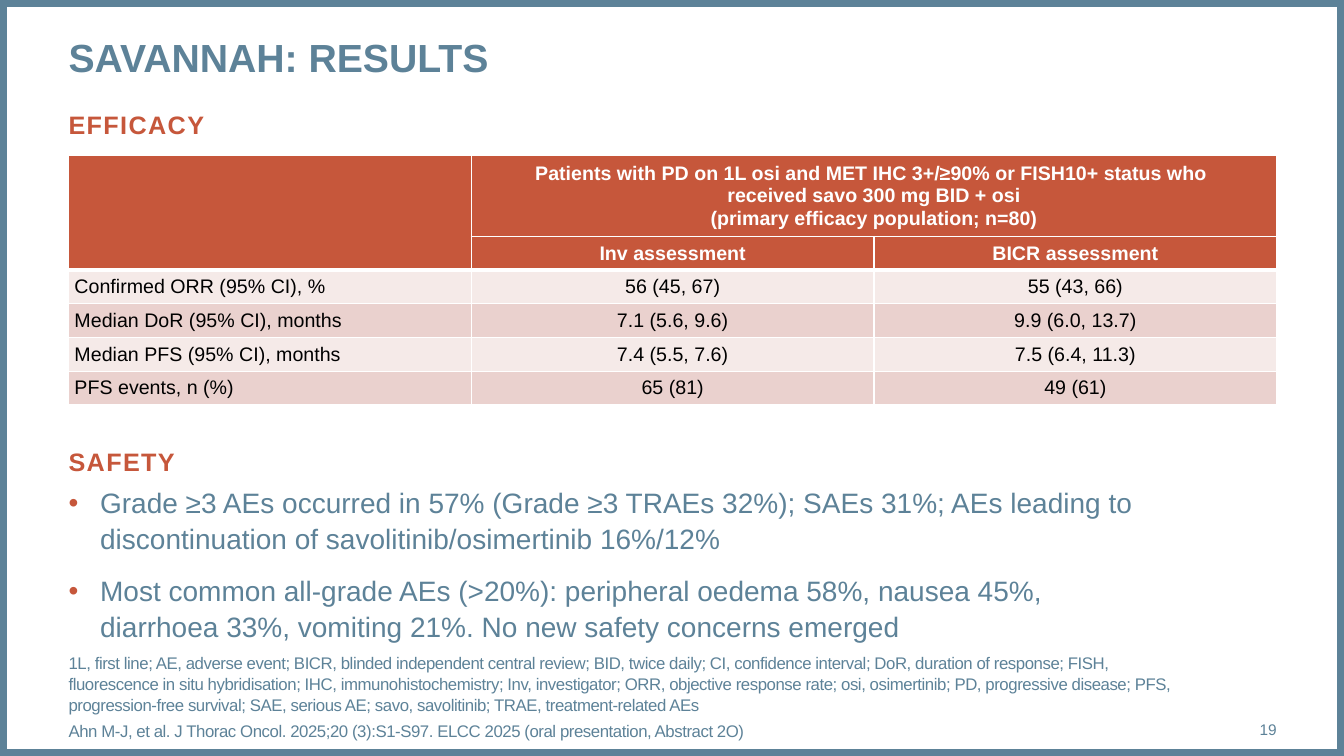
from lxml import etree
from pptx import Presentation
from pptx import util as u
from pptx.dml.color import RGBColor
from pptx.enum import shapes, text
from pptx.oxml import ns

COLORS = {"slate": "5D8298", "rust": "C6573B", "white": "FFFFFF",
          "black": "000000", "pale": "F5EAE8", "rose": "EAD1CE"}
LEFT, WIDTH = 49, 863


def add_xml(parent, tag, **attributes):
    return etree.SubElement(parent, ns.qn(tag), attributes)


class ResultsSlide:
    font = "Arial"

    def __init__(self, presentation):
        self.slide = presentation.slides.add_slide(presentation.slide_layouts[6])

    def color(self, name):
        return RGBColor.from_string(COLORS[name])

    def add_runs(self, paragraph, content, size, color, bold=False, tracking=0):
        for index, line in enumerate(content.split("\n")):
            if index:
                paragraph.add_line_break()
            run = paragraph.add_run()
            run.text = line
            run.font.name = self.font
            run.font.size = u.Pt(size)
            run.font.bold = bold
            run.font.color.rgb = self.color(color)
            if tracking:
                run.font._element.set("spc", str(round(tracking * 100)))

    def bullet(self, paragraph, indent):
        properties = paragraph._p.get_or_add_pPr()
        properties.set("marL", str(u.Pt(indent)))
        properties.set("indent", str(-u.Pt(indent)))
        bullet_color = add_xml(properties, "a:buClr")
        add_xml(bullet_color, "a:srgbClr", val=COLORS["rust"])
        add_xml(properties, "a:buFont", typeface=self.font)
        add_xml(properties, "a:buChar", char="•")

    def frame(self, width, height, line):
        shape = self.slide.shapes.add_shape(
            shapes.MSO_SHAPE.RECTANGLE, 0, 0, u.Pt(width), u.Pt(height))
        shape.shadow.inherit = False
        shape.fill.background()
        shape.line.color.rgb = self.color("slate")
        shape.line.width = u.Pt(line)

    def text(self, box, paragraphs, size, color="slate", bold=False, tracking=0,
             anchor=text.MSO_ANCHOR.TOP, align=text.PP_ALIGN.LEFT,
             spacing=1.06, before=0, indent=0):
        shape = self.slide.shapes.add_textbox(*map(u.Pt, box))
        frame = shape.text_frame
        frame.word_wrap = True
        frame.vertical_anchor = anchor
        frame.margin_left = frame.margin_right = 0
        frame.margin_top = frame.margin_bottom = 0
        for index, content in enumerate(paragraphs):
            paragraph = frame.add_paragraph() if index else frame.paragraphs[0]
            paragraph.alignment = align
            paragraph.line_spacing = spacing
            paragraph.space_before = u.Pt(before if index else 0)
            if indent:
                self.bullet(paragraph, indent)
            self.add_runs(paragraph, content, size, color, bold, tracking)

    def heading(self, top, content):
        self.text((LEFT, top, 200, 25), [content], 18, "rust", True, tracking=1)

    def borders(self, cell, top, bottom):
        properties = cell._tc.get_or_add_tcPr()
        for side, width in (("L", 1), ("R", 1), ("T", top), ("B", bottom)):
            line = add_xml(properties, f"a:ln{side}", w=str(u.Pt(width)))
            if width:
                fill = add_xml(line, "a:solidFill")
                add_xml(fill, "a:srgbClr", val=COLORS["white"])
            else:
                add_xml(line, "a:noFill")

    def table(self, top, rows, heights, header_rows, size):
        columns = len(rows[0])
        table = self.slide.shapes.add_table(
            len(rows), columns, u.Pt(LEFT), u.Pt(top), u.Pt(WIDTH), u.Pt(sum(heights))).table
        table.first_row = table.horz_banding = False
        for row_index, (values, height) in enumerate(zip(rows, heights)):
            table.rows[row_index].height = u.Pt(height)
            header = row_index < header_rows
            band = ("pale", "rose")[(row_index - header_rows) % 2]
            for column, value in enumerate(values):
                cell = table.cell(row_index, column)
                # The blank header cells read as one block
                blank_block = header and column == 0
                edges = [3 if edge == header_rows
                         else 0 if blank_block and 0 < edge < header_rows else 1
                         for edge in (row_index, row_index + 1)]
                self.borders(cell, *edges)
                cell.fill.solid()
                cell.fill.fore_color.rgb = self.color("rust" if header else band)
                cell.vertical_anchor = text.MSO_ANCHOR.MIDDLE
                cell.margin_left = cell.margin_right = u.Pt(4.2)
                cell.margin_top = cell.margin_bottom = u.Pt(3.6)
                paragraph = cell.text_frame.paragraphs[0]
                paragraph.alignment = (text.PP_ALIGN.CENTER if column
                                       else text.PP_ALIGN.LEFT)
                if value:
                    self.add_runs(paragraph, value, size,
                                  "white" if header else "black", header)
                else:
                    add_xml(paragraph._p, "a:endParaRPr", sz=str(size * 100))
        table.cell(0, 1).merge(table.cell(0, columns - 1))


def main():
    presentation = Presentation()
    presentation.slide_width = u.Pt(960)
    presentation.slide_height = u.Pt(540)
    page = ResultsSlide(presentation)

    # Frame and title
    page.frame(960, 540, 10)
    page.text((LEFT, 20.2, WIDTH, 68), ["SAVANNAH: RESULTS"], 28, bold=True, spacing=1.1)

    # Efficacy
    page.heading(77, "EFFICACY")
    page.table(111.3, [
        ("", "Patients with PD on 1L osi and MET IHC 3+/≥90% or FISH10+ status who \n"
             "received savo 300 mg BID + osi\n(primary efficacy population; n=80)", ""),
        ("", "Inv assessment", "BICR assessment"),
        ("Confirmed ORR (95% CI), %", "56 (45, 67)", "55 (43, 66)"),
        ("Median DoR (95% CI), months", "7.1 (5.6, 9.6)", "9.9 (6.0, 13.7)"),
        ("Median PFS (95% CI), months", "7.4 (5.5, 7.6)", "7.5 (6.4, 11.3)"),
        ("PFS events, n (%)", "65 (81)", "49 (61)"),
    ], [55] + [23] * 5, header_rows=2, size=14)

    # Safety
    page.heading(317.5, "SAFETY")
    page.text((LEFT, 345.6, WIDTH, 117), [
        "Grade ≥3 AEs occurred in 57% (Grade ≥3 TRAEs 32%); SAEs 31%; AEs leading to \n"
        "discontinuation of savolitinib/osimertinib 16%/12%",
        "Most common all-grade AEs (>20%): peripheral oedema 58%, nausea 45%, \n"
        "diarrhoea 33%, vomiting 21%. No new safety concerns emerged",
    ], 20, before=12, indent=22.5)

    # Abbreviations, reference and slide number
    page.text((LEFT, 500.4, 801, 28.8), [
        "1L, first line; AE, adverse event; BICR, blinded independent central review; "
        "BID, twice daily; CI, confidence interval; DoR, duration of response; "
        "FISH, fluorescence in situ hybridisation; IHC, immunohistochemistry; "
        "Inv, investigator; ORR, objective response rate; osi, osimertinib; "
        "PD, progressive disease; PFS, progression-free survival; SAE, serious AE; "
        "savo, savolitinib; TRAE, treatment-related AEs",
        "Ahn M-J, et al. J Thorac Oncol. 2025;20 (3):S1-S97. "
        "ELCC 2025 (oral presentation, Abstract 2O)",
    ], 12, tracking=-0.3, anchor=text.MSO_ANCHOR.BOTTOM, before=3)
    page.text((850, 506, 62, 28.8), ["19"], 11,
              anchor=text.MSO_ANCHOR.MIDDLE, align=text.PP_ALIGN.RIGHT)

    presentation.save("out.pptx")


if __name__ == "__main__":
    main()
